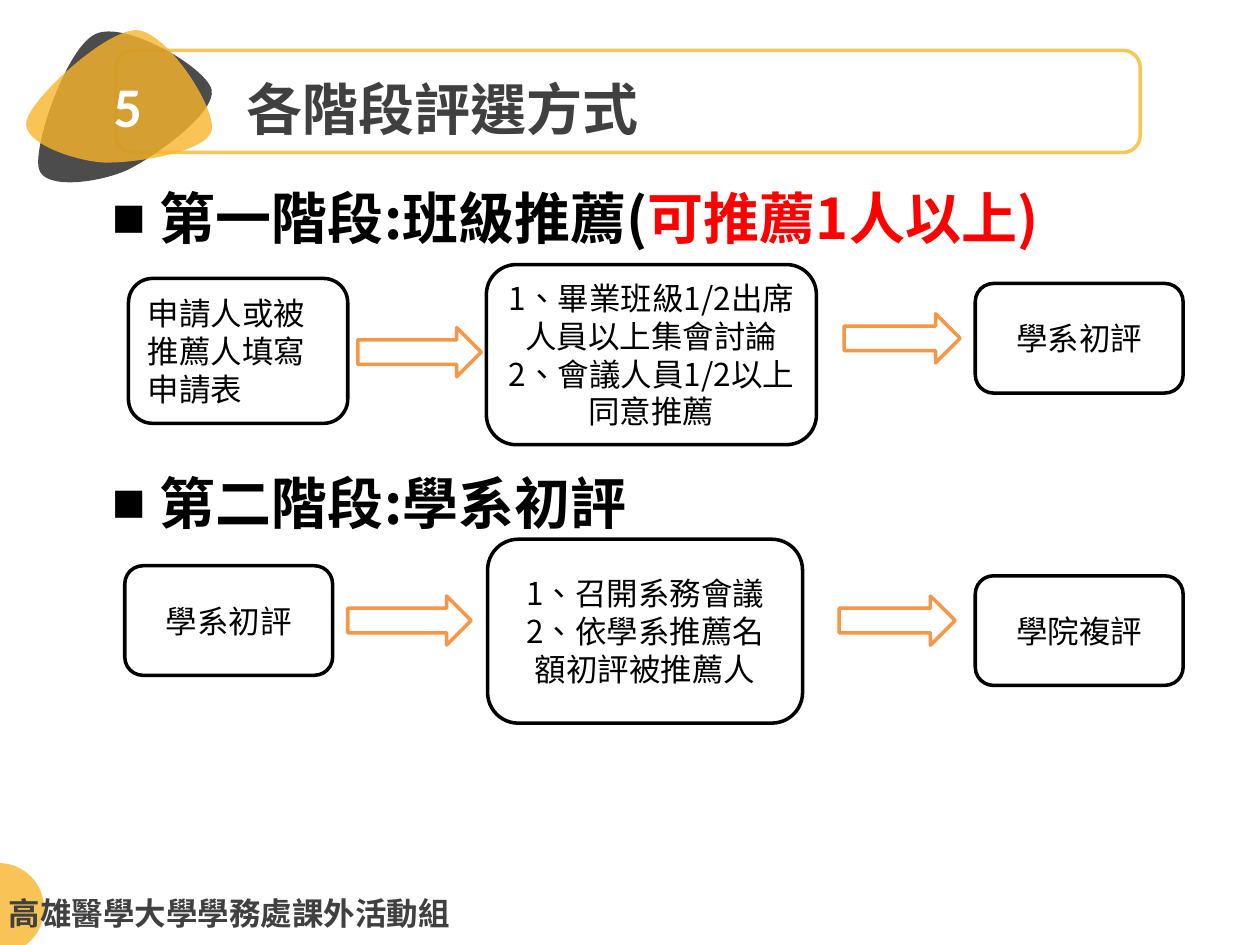
from pptx import Presentation
from pptx.dml.color import RGBColor
from pptx.enum.shapes import MSO_SHAPE as Shape
from pptx.enum.text import MSO_ANCHOR as Anchor, PP_ALIGN as Align
from pptx.oxml import parse_xml
from pptx.oxml.ns import nsdecls, qn
from pptx.util import Inches, Pt

SANS = "Noto Sans CJK SC"
BLACK, WHITE, RED, GREY = "000000", "FFFFFF", "FF0000", "404040"
AMBER, GOLD, ORANGE = "F8B62B", "F9C555", "F79646"


def color(code):
    return RGBColor.from_string(code)


def paint(shape, fill=None, line=None, opacity=None):
    shape.shadow.inherit = False
    if fill:
        shape.fill.solid()
        shape.fill.fore_color.rgb = color(fill)
    else:
        shape.fill.background()
    if opacity:
        tone = shape.fill._xPr.find(qn("a:solidFill"))[0]
        tone.append(parse_xml(f'<a:alpha {nsdecls("a")} val="{opacity * 1000}"/>'))
    if line:
        shape.line.color.rgb = color(line)
        shape.line.width = Pt(2)
    else:
        shape.line.fill.background()


def add_preset(page, kind, box, **look):
    shape = page.shapes.add_shape(kind, *map(Inches, box))
    paint(shape, **look)
    return shape


def write(para, spans, size, bold=False, font=SANS, align=Align.LEFT):
    """Add (text, colour) spans to a paragraph with a fixed line pitch."""
    para.alignment = align
    para.line_spacing = Pt(round(size * 1.2, 1))
    for text, tone in spans:
        span = para.add_run()
        span.text = text
        span.font.size, span.font.bold, span.font.name = Pt(size), bold, font
        span.font.color.rgb = color(tone)
        props = span.font._element
        props.set("lang", "zh-TW")
        props.append(parse_xml(f'<a:ea {nsdecls("a")} typeface="{SANS}"/>'))


def add_text(page, box, spans, size, **style):
    frame = page.shapes.add_textbox(*map(Inches, box)).text_frame
    frame.word_wrap = True
    write(frame.paragraphs[0], spans, size, bold=True, **style)
    return frame.paragraphs[0]


def add_blob(page, start, knots, fill, opacity):
    """Closed outline of cubic curves; each takes three knots."""
    builder = page.shapes.build_freeform(*map(Inches, start))
    builder.add_line_segments([tuple(map(Inches, knot)) for knot in knots])
    shape = builder.convert_to_shape()
    outline = shape._element.find(".//" + qn("a:path"))
    lines = outline.findall(qn("a:lnTo"))
    for first in range(0, len(lines), 3):
        curve = parse_xml(f'<a:cubicBezTo {nsdecls("a")}/>')
        for line in lines[first:first + 3]:
            curve.append(line[0])
            outline.remove(line)
        outline.append(curve)
    outline.append(parse_xml(f'<a:close {nsdecls("a")}/>'))
    paint(shape, fill=fill, opacity=opacity)


def add_header(page, box, number, title):
    left, top, width, height = box
    add_preset(page, Shape.ROUNDED_RECTANGLE, box, line=GOLD)
    # Overlapping badge shapes
    add_blob(page, (1.01, 1.35), [
        (1.24, 1.24), (1.72, 0.89), (1.68, 0.71),
        (1.63, 0.53), (0.99, 0.16), (0.76, 0.27),
        (0.53, 0.37), (0.26, 1.16), (0.31, 1.34),
        (0.35, 1.51), (0.79, 1.45), (1.01, 1.35)], BLACK, 70)
    add_blob(page, (0.81, 1.29), [
        (1.06, 1.3), (1.63, 1.21), (1.68, 1.04),
        (1.72, 0.86), (1.33, 0.26), (1.09, 0.24),
        (0.84, 0.23), (0.25, 0.78), (0.21, 0.96),
        (0.17, 1.13), (0.57, 1.27), (0.81, 1.29)], AMBER, 80)
    add_text(page, (left + 0.94, top + 0.14, 6.92, 0.59), [(title, GREY)], 32)
    add_text(page, (left - 0.69, top + 0.12, 1.57, 0.74), [(number, WHITE)], 32,
             font="Calibri", align=Align.CENTER)


def add_footer(page, box, label):
    left, top, width, height = box
    add_preset(page, Shape.OVAL, (left - 0.34, top - 0.2, 0.72, 0.72),
               fill=AMBER, opacity=80)
    add_text(page, box, [(label, GREY)], 18)


def add_step(page, box, lines, align=Align.CENTER):
    card = add_preset(page, Shape.ROUNDED_RECTANGLE, box, fill=WHITE, line=BLACK)
    frame = card.text_frame
    frame.word_wrap = True
    frame.vertical_anchor = Anchor.MIDDLE
    for index, line in enumerate(lines):
        para = frame.add_paragraph() if index else frame.paragraphs[0]
        write(para, [(line, BLACK)], 18, align=align)


def add_stage(page, box, heading, steps, arrows):
    """Bulleted heading above a row of steps joined by block arrows."""
    para = add_text(page, box, heading, 32)
    props = para._p.get_or_add_pPr()
    props.set("marL", str(Inches(0.38)))
    props.set("indent", str(-Inches(0.38)))
    props.append(parse_xml(f'<a:buFont {nsdecls("a")} typeface="Arial"/>'))
    props.append(parse_xml(f'<a:buChar {nsdecls("a")} char="■"/>'))
    for step in steps:
        add_step(page, *step)
    for arrow in arrows:
        add_preset(page, Shape.RIGHT_ARROW, arrow, fill=WHITE, line=ORANGE)


def main():
    deck = Presentation()
    deck.slide_width, deck.slide_height = Inches(10), Inches(7.5)
    page = deck.slides.add_slide(deck.slide_layouts[6])

    add_footer(page, (-0.03, 7.05, 3.77, 0.4), "高雄醫學大學學務處課外活動組")
    add_header(page, (0.92, 0.4, 8.13, 0.81), "5", "各階段評選方式")

    # Stage one: class recommendation
    add_stage(
        page, (0.79, 1.41, 8.7, 0.65),
        [("第一階段:班級推薦(", BLACK), ("可推薦1人以上)", RED)],
        [((1.02, 2.21, 1.74, 1.15), ["申請人或被推薦人填寫申請表"], Align.LEFT),
         ((3.86, 2.1, 2.62, 1.43), ["1、畢業班級1/2出席人員以上集會討論",
                                    "2、會議人員1/2以上同意推薦"]),
         ((7.74, 2.25, 1.65, 0.87), ["學系初評"])],
        [(2.84, 2.6, 0.98, 0.39), (6.7, 2.49, 0.92, 0.39)])

    # Stage two: department review
    add_stage(
        page, (0.79, 3.67, 8.7, 0.65),
        [("第二階段:學系初評", BLACK)],
        [((0.99, 4.49, 1.65, 0.87), ["學系初評"]),
         ((3.87, 4.28, 2.5, 1.46), ["1、召開系務會議", "2、依學系推薦名",
                                    "額初評被推薦人"]),
         ((7.74, 4.57, 1.65, 0.87), ["學院複評"])],
        [(2.76, 4.73, 0.98, 0.39), (6.66, 4.73, 0.92, 0.39)])

    deck.save("out.pptx")


if __name__ == "__main__":
    main()
